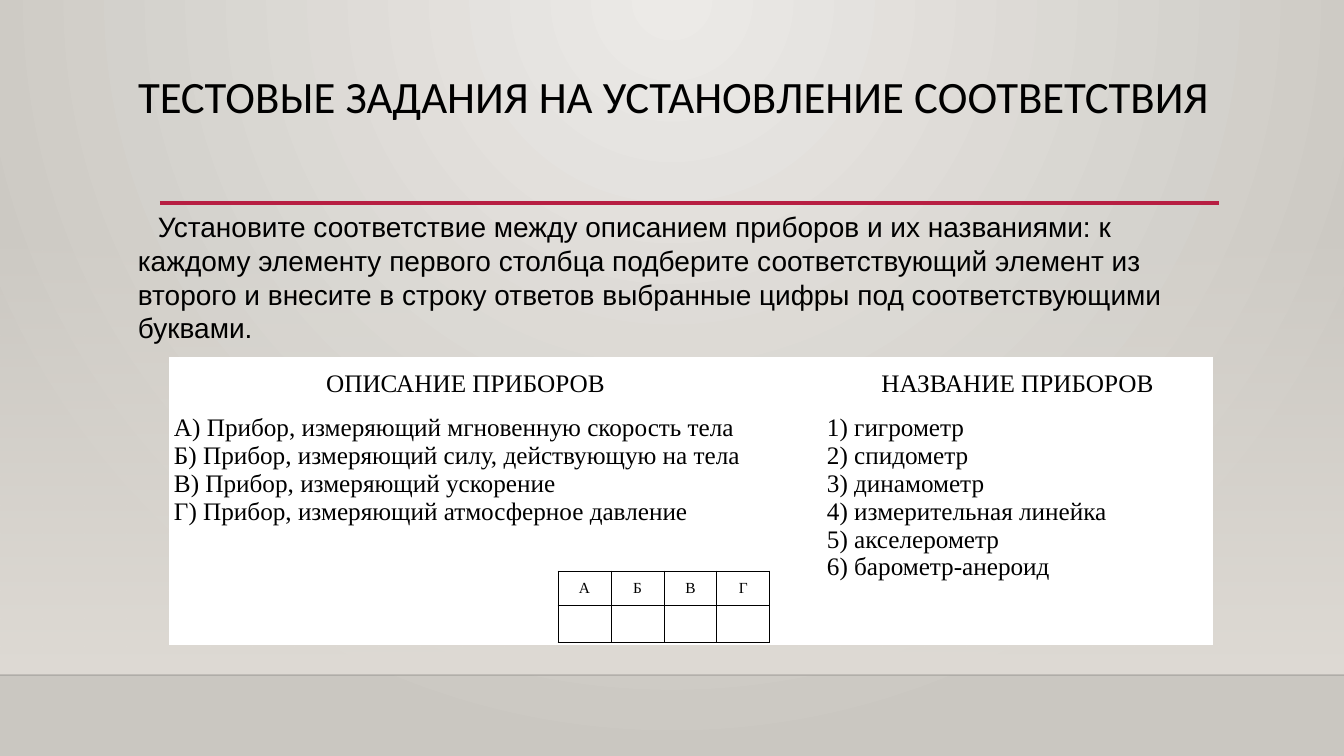
from lxml import etree
from pptx import Presentation, util as u
from pptx.dml.color import RGBColor
from pptx.enum import shapes, text
from pptx.oxml import parse_xml
from pptx.oxml.ns import qn

NS = 'xmlns:a="http://schemas.openxmlformats.org/drawingml/2006/main"'
MID, TOP = text.MSO_ANCHOR.MIDDLE, text.MSO_ANCHOR.TOP
LEFT, CENTER = text.PP_ALIGN.LEFT, text.PP_ALIGN.CENTER


def px(n):
    return u.Emu(round(n * 914400 / 100.8))


def tint(code):
    return RGBColor.from_string(code)


def grade(stops, mode):
    marks = "".join(
        f'<a:gs pos="{pos}"><a:srgbClr val="{code}"><a:alpha val="{alpha}"/></a:srgbClr></a:gs>'
        for pos, code, alpha in stops)
    return parse_xml(f'<a:gradFill {NS} rotWithShape="1"><a:gsLst>{marks}</a:gsLst>{mode}</a:gradFill>')


class Deck:
    ink = "000000"
    serif = "Times New Roman"

    def __init__(self, wide, high):
        self.prs = Presentation()
        self.prs.slide_width, self.prs.slide_height = px(wide), px(high)
        self.slide = self.prs.slides.add_slide(self.prs.slide_layouts[5])

    def fill(self, frame, lines, size, face, align=LEFT, **form):
        for i, line in enumerate(lines):
            par = frame.paragraphs[0] if i == 0 else frame.add_paragraph()
            par.alignment = align
            for key, val in form.items():
                setattr(par, key, val)
            run = par.add_run()
            run.text = line
            for key, val in {"size": u.Pt(size), "name": face}.items():
                setattr(run.font, key, val)
            run.font.color.rgb = tint(self.ink)

    def blend(self, fill, root, stops, mode):
        fill.solid()
        fill.fore_color.rgb = tint(stops[0][1])
        old = root.find(".//" + qn("a:solidFill"))
        old.getparent().replace(old, grade(stops, mode))

    def back(self, stops, mode):
        self.blend(self.slide.background.fill, self.slide.element.cSld, stops, mode)

    def panel(self, box, stops, mode):
        shape = self.slide.shapes.add_shape(shapes.MSO_SHAPE.RECTANGLE, *map(px, box))
        shape.shadow.inherit = False
        shape.line.fill.background()
        self.blend(shape.fill, shape.element.spPr, stops, mode)

    def rule(self, ends, code, width, alpha=100):
        line = self.slide.shapes.add_connector(shapes.MSO_CONNECTOR.STRAIGHT, *map(px, ends))
        line.line.color.rgb = tint(code)
        line.line.width = u.Pt(width)
        prop = line.element.spPr
        etree.SubElement(prop.find(".//" + qn("a:srgbClr")), qn("a:alpha"), val=str(alpha * 1000))
        etree.SubElement(prop, qn("a:effectLst"))

    def title(self, box, words, size, face):
        shape = self.slide.shapes.title
        for key, val in zip(("left", "top", "width", "height"), box):
            setattr(shape, key, px(val))
        shape.text_frame.vertical_anchor = TOP
        shape.text_frame.word_wrap = True
        self.fill(shape.text_frame, [words], size, face, line_spacing=0.9)

    def note(self, box, words, size, face, indent):
        frame = self.slide.shapes.add_textbox(*map(px, box)).text_frame
        frame.word_wrap = True
        self.fill(frame, [words], size, face)
        frame.paragraphs[0]._p.get_or_add_pPr().set("indent", str(px(indent)))

    def table(self, box, cols, rows, data, size, edge=None):
        grid = self.slide.shapes.add_table(len(rows), len(cols), *map(px, box)).table
        grid.first_row = grid.horz_banding = False
        for part, sizes, key in ((grid.columns, cols, "width"), (grid.rows, rows, "height")):
            for item, val in zip(part, sizes):
                setattr(item, key, px(val))
        for r, row in enumerate(data):
            for c, lines in enumerate(row):
                cell = grid.cell(r, c)
                form = {"margin_left": px(4), "margin_right": px(4), "margin_top": px(4),
                        "margin_bottom": px(4), "vertical_anchor": TOP if r else MID}
                for key, val in form.items():
                    setattr(cell, key, val)
                self.fill(cell.text_frame, lines, size, self.serif, LEFT if r else CENTER)
                if edge:
                    self.edge(cell, edge)
                cell.fill.solid()
                cell.fill.fore_color.rgb = tint("FFFFFF")

    def edge(self, cell, code):
        prop = cell._tc.get_or_add_tcPr()
        for side in ("lnL", "lnR", "lnT", "lnB"):
            prop.append(parse_xml(
                f'<a:{side} {NS} w="{u.Pt(0.75)}"><a:solidFill><a:srgbClr val="{code}"/>'
                f'</a:solidFill></a:{side}>'))


def main():
    deck = Deck(1344, 756)
    deck.back([(0, "ECEAE7", 100000), (100000, "CAC7C1", 100000)],
              '<a:path path="circle"><a:fillToRect l="43000" t="0" r="43000" b="100000"/></a:path>')
    deck.panel((0, 223, 1344, 452), [(0, "DFDBD5", 0), (100000, "DFDBD5", 100000)],
               '<a:lin ang="5400000" scaled="0"/>')
    deck.rule((0, 675, 1344, 675), "000001", 1, 20)
    deck.rule((160, 203, 1219, 203), "B71E42", 2.5)
    deck.title((128, 70, 1184, 116), "ТЕСТОВЫЕ ЗАДАНИЯ НА УСТАНОВЛЕНИЕ СООТВЕТСТВИЯ", 32, "Calibri")
    tools = ["А) Прибор, измеряющий мгновенную скорость тела",
             "Б) Прибор, измеряющий силу, действующую на тела",
             "В) Прибор, измеряющий ускорение",
             "Г) Прибор, измеряющий атмосферное давление"]
    names = ["гигрометр", "спидометр", "динамометр", "измерительная линейка",
             "акселерометр", "барометр-анероид"]
    listed = [f"{i}) {name}" for i, name in enumerate(names, 1)]
    deck.table((170, 358, 1042, 286), (591, 62, 389), (52, 234),
               [[["ОПИСАНИЕ ПРИБОРОВ"], [""], ["НАЗВАНИЕ ПРИБОРОВ"]], [tools, [""], listed]], 18)
    deck.table((558, 571, 212, 70), [53] * 4, [35] * 2,
               [[[mark] for mark in "AБВГ"], [[""]] * 4], 11, deck.ink)
    deck.note((128, 205, 1072, 145),
              "Установите соответствие между описанием приборов и их названиями: "
              "к каждому элементу первого столбца подберите соответствующий элемент из второго "
              "и внесите в строку ответов выбранные цифры под соответствующими буквами.",
              20, "Arial", 20)
    deck.prs.save("out.pptx")


if __name__ == "__main__":
    main()
